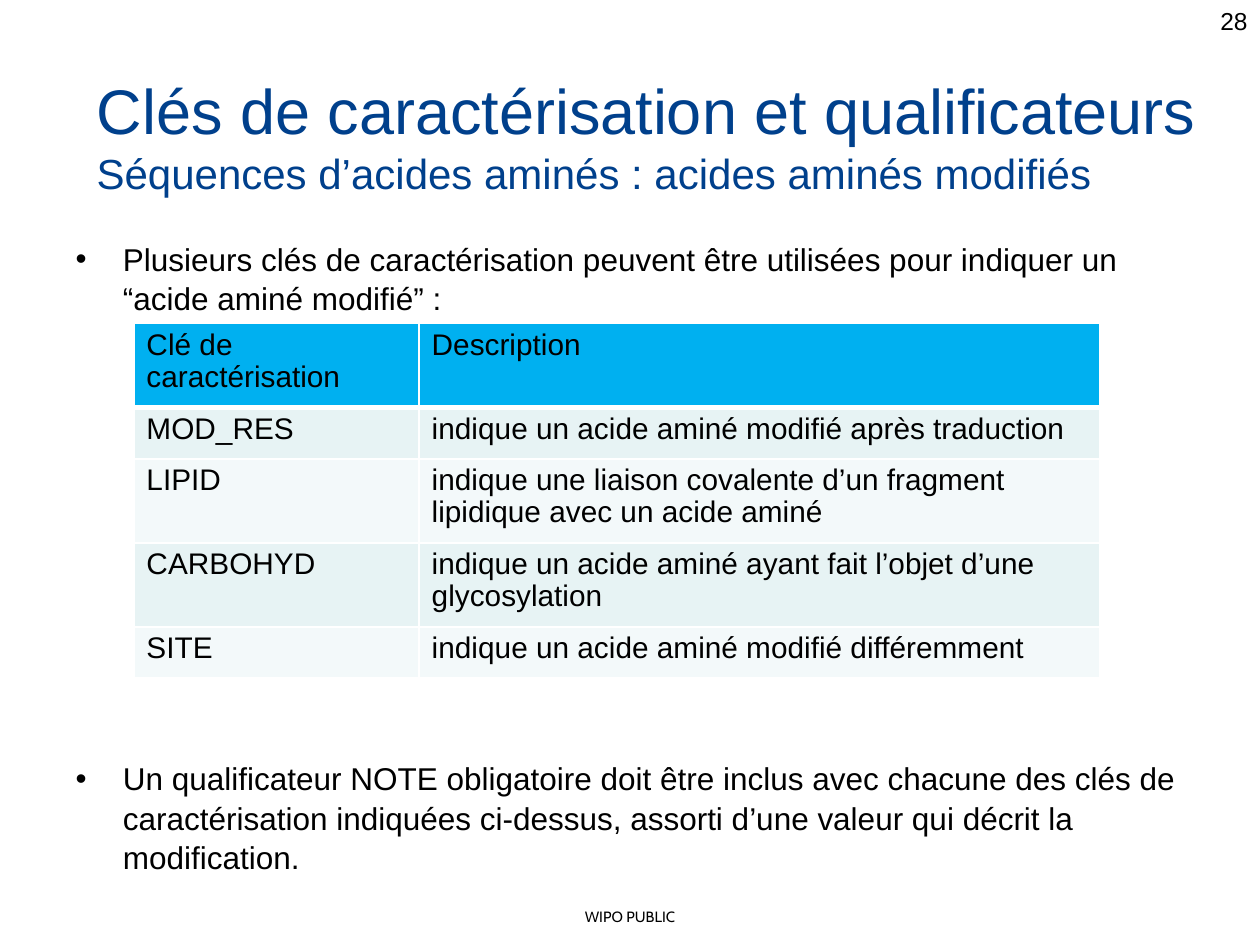
from lxml import etree
from pptx import Presentation
from pptx.dml.color import RGBColor
from pptx.enum import text
from pptx.oxml.ns import qn
from pptx.util import Pt

BLACK = RGBColor(0x00, 0x00, 0x00)
NAVY = RGBColor(0x00, 0x40, 0x8C)
SKY = RGBColor(0x00, 0xB0, 0xF0)
BANDS = (RGBColor(0xE7, 0xF3, 0xF4), RGBColor(0xF3, 0xF9, 0xFA))
WHITE = "FFFFFF"

TITLE = (
    ("Clés de caractérisation et qualificateurs", 36),
    ("Séquences d’acides aminés : acides aminés modifiés", 24),
)
# Text and space before; the second bullet clears the table
BULLETS = (
    ("Plusieurs clés de caractérisation peuvent être utilisées pour indiquer un "
     "“acide aminé modifié” :", 0),
    ("Un qualificateur NOTE obligatoire doit être inclus avec chacune des clés de "
     "caractérisation indiquées ci-dessus, assorti d’une valeur qui décrit la "
     "modification.", 252),
)
ROWS = (
    ("Clé de caractérisation", "Description"),
    ("MOD_RES", "indique un acide aminé modifié après traduction"),
    ("LIPID", "indique une liaison covalente d’un fragment lipidique avec un acide aminé"),
    ("CARBOHYD", "indique un acide aminé ayant fait l’objet d’une glycosylation"),
    ("SITE", "indique un acide aminé modifié différemment"),
)
COL_WIDTHS = (163, 389)
ROW_HEIGHTS = (48, 29.3, 48, 48, 29.3)


def place(sp, left, top, width, height):
    sp.left, sp.top, sp.width, sp.height = map(Pt, (left, top, width, height))


def add_run(p, words, size, color=BLACK, font="Arial"):
    r = p.add_run()
    r.text = words
    r.font.size = Pt(size)
    r.font.name = font
    r.font.color.rgb = color


def next_paragraph(tf, i):
    return tf.add_paragraph() if i else tf.paragraphs[0]


def add_title(s):
    sp = s.shapes.title
    place(sp, 48, 34, 648, 90)
    tf = sp.text_frame
    tf.auto_size = text.MSO_AUTO_SIZE.NONE
    tf.vertical_anchor = text.MSO_ANCHOR.MIDDLE
    tf.margin_bottom = Pt(8)
    for i, (words, size) in enumerate(TITLE):
        p = next_paragraph(tf, i)
        p.alignment = text.PP_ALIGN.LEFT
        add_run(p, words, size, NAVY)


def add_bullets(s):
    sp = s.placeholders[1]
    place(sp, 36, 132.5, 648, 407.5)
    tf = sp.text_frame
    tf.auto_size = text.MSO_AUTO_SIZE.NONE
    for i, (words, before) in enumerate(BULLETS):
        p = next_paragraph(tf, i)
        pPr = p._p.get_or_add_pPr()
        pPr.set("marL", str(Pt(27)))
        pPr.set("indent", str(Pt(-27)))
        etree.SubElement(pPr, qn("a:buChar")).set("char", "•")
        p.space_before = Pt(before)
        p.line_spacing = 1.04
        add_run(p, words, 18)


def set_borders(cell, bottom):
    tcPr = cell._tc.get_or_add_tcPr()
    widths = (("L", 1), ("R", 1), ("T", 1), ("B", bottom))
    for i, (side, width) in enumerate(widths):
        ln = etree.Element(qn("a:ln" + side), w=str(Pt(width)))
        fill = etree.SubElement(ln, qn("a:solidFill"))
        etree.SubElement(fill, qn("a:srgbClr")).set("val", WHITE)
        tcPr.insert(i, ln)


def add_key_table(s):
    frame = s.shapes.add_table(len(ROWS), len(COL_WIDTHS), Pt(76.5), Pt(185),
                               Pt(sum(COL_WIDTHS)), Pt(sum(ROW_HEIGHTS)))
    table = frame.table
    for col, width in zip(table.columns, COL_WIDTHS):
        col.width = Pt(width)
    for i, (row, height) in enumerate(zip(table.rows, ROW_HEIGHTS)):
        row.height = Pt(height)
        for cell, words in zip(row.cells, ROWS[i]):
            cell.fill.solid()
            cell.fill.fore_color.rgb = BANDS[(i - 1) % 2] if i else SKY
            set_borders(cell, 1 if i else 3)
            p = cell.text_frame.paragraphs[0]
            p.line_spacing = 0.96
            add_run(p, words, 17)


def add_label(s, box, words, size, align, font="Arial"):
    sp = s.shapes.add_textbox(*map(Pt, box))
    tf = sp.text_frame
    tf.word_wrap = True
    p = tf.paragraphs[0]
    p.alignment = align
    add_run(p, words, size, font=font)


def main():
    prs = Presentation()
    prs.slide_width, prs.slide_height = Pt(720), Pt(540)
    s = prs.slides.add_slide(prs.slide_layouts[1])

    # Footer and slide number
    add_label(s, (0, 515, 720, 17), "WIPO PUBLIC", 8.5,
              text.PP_ALIGN.CENTER, "Cabin")
    add_label(s, (552, 0, 168, 37.5), "28", 14, text.PP_ALIGN.RIGHT)

    # Main content
    add_title(s)
    add_bullets(s)
    add_key_table(s)
    prs.save("out.pptx")


if __name__ == "__main__":
    main()
